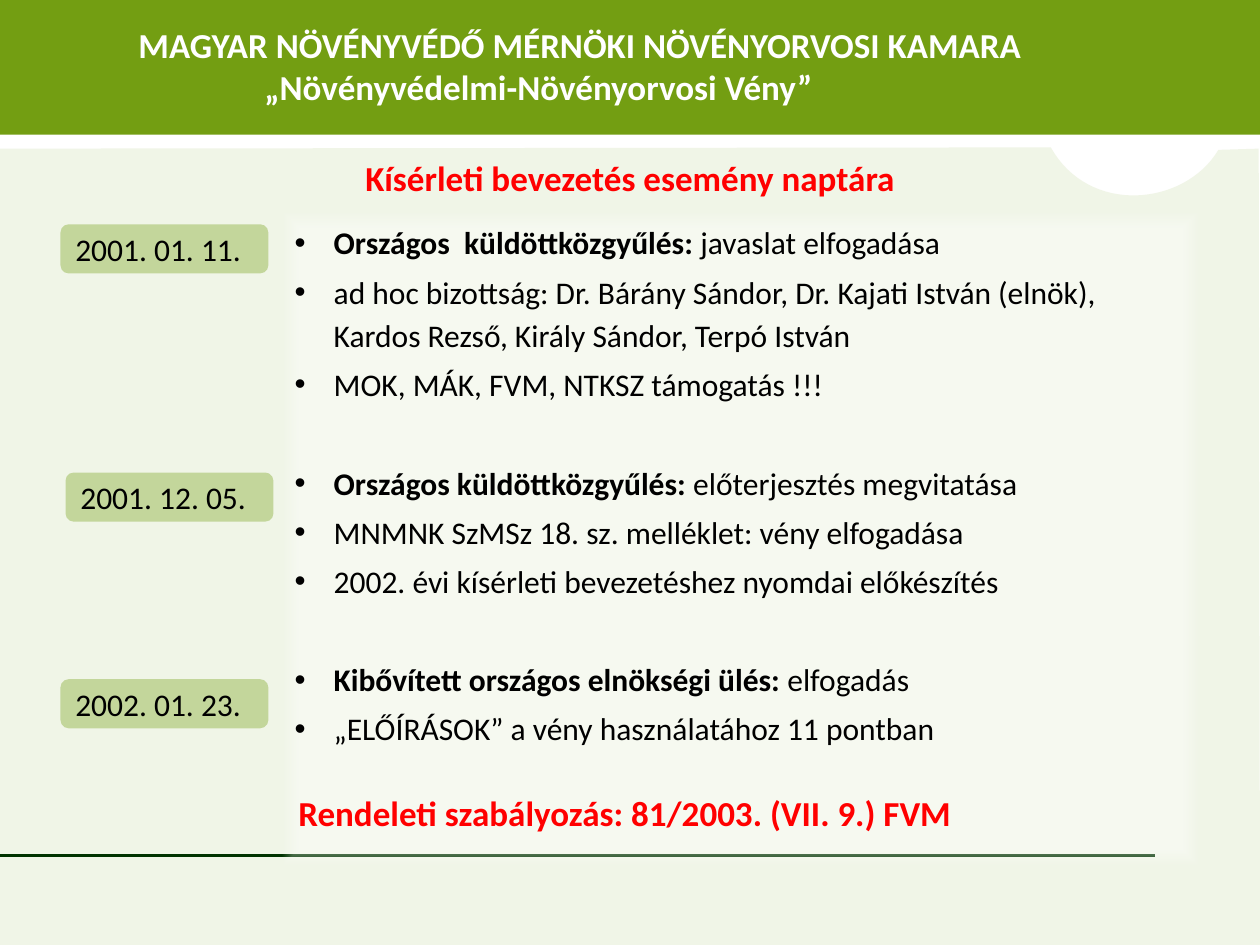
from dataclasses import dataclass

from lxml import etree
from pptx import Presentation
from pptx import util as u
from pptx.dml.color import RGBColor
from pptx.enum import shapes, text
from pptx.oxml import parse_xml
from pptx.oxml import ns

HEADER = [
    ("MAGYAR NÖVÉNYVÉDŐ MÉRNÖKI NÖVÉNYORVOSI KAMARA", 1),
    ("„Növényvédelmi-Növényorvosi Vény”", 2),
]
HEADLINES = [
    ("Kísérleti bevezetés esemény naptára", 0, 1.19),
    ("Rendeleti szabályozás: 81/2003. (VII. 9.) FVM", -0.04, 6.23),
]
DATES = [
    ("2001. 01. 11.", 0.48, 1.78),
    ("2001. 12. 05.", 0.52, 3.75),
    ("2002. 01. 23.", 0.48, 5.39),
]
EVENTS = [
    [
        ("Országos  küldöttközgyűlés: ", "javaslat elfogadása"),
        ("", "ad hoc bizottság: Dr. Bárány Sándor, Dr. Kajati István (elnök), "
             "Kardos Rezső, Király Sándor, Terpó István"),
        ("", "MOK, MÁK, FVM, NTKSZ támogatás !!!"),
    ],
    [
        ("Országos küldöttközgyűlés: ", "előterjesztés megvitatása"),
        ("", "MNMNK SzMSz 18. sz. melléklet: vény elfogadása"),
        ("", "2002. évi kísérleti bevezetéshez nyomdai előkészítés"),
    ],
    [
        ("Kibővített országos elnökségi ülés: ", "elfogadás"),
        ("", "„ELŐÍRÁSOK” a vény használatához 11 pontban"),
    ],
]
NOTCH = [(8.34, 1.17), (8.64, 1.71), (9.4, 1.64), (9.67, 1.19)]
CURVE_STEPS = 32
FADING_FILL = f"""<a:gradFill {ns.nsdecls("a")} rotWithShape="1"><a:gsLst>
<a:gs pos="95000"><a:srgbClr val="FFFFFF"><a:alpha val="40000"/></a:srgbClr></a:gs>
<a:gs pos="100000"><a:srgbClr val="FFFFFF"><a:alpha val="0"/></a:srgbClr></a:gs>
</a:gsLst><a:path path="rect"><a:fillToRect l="50000" t="50000" r="50000" b="50000"/></a:path>
</a:gradFill>"""


@dataclass(frozen=True)
class Theme:
    font: str = "Calibri"
    header: str = "739E12"
    panel: str = "EBF1DE"
    rule: str = "003300"
    badge: str = "C3D69B"
    accent: str = "FF0000"
    ink: str = "000000"
    paper: str = "FFFFFF"
    large: int = 20
    normal: int = 18
    item_gap: float = 3.2
    group_gap: float = 31.5


THEME = Theme()


def color(value):
    return RGBColor.from_string(value)


def add_run(paragraph, words, size, ink, bold=False):
    run = paragraph.add_run()
    run.text = words
    run.font.name = THEME.font
    run.font.size = u.Pt(size)
    run.font.bold = bold
    run.font.color.rgb = color(ink)


def paint(shape, fill):
    shape.shadow.inherit = False
    shape.line.fill.background()
    shape.fill.solid()
    shape.fill.fore_color.rgb = color(fill)


def add_block(slide, preset, box, fill, anchor=text.MSO_ANCHOR.MIDDLE):
    shape = slide.shapes.add_shape(preset, *map(u.Inches, box))
    paint(shape, fill)
    shape.text_frame.word_wrap = True
    shape.text_frame.vertical_anchor = anchor
    return shape


def next_paragraph(frame, index):
    paragraph = frame.add_paragraph() if index else frame.paragraphs[0]
    paragraph.alignment = text.PP_ALIGN.LEFT
    return paragraph


def set_indent(paragraph, left, first=0):
    properties = paragraph._p.get_or_add_pPr()
    properties.set("marL", str(u.Inches(left)))
    properties.set("indent", str(u.Inches(first)))
    return properties


def curve_point(t):
    weights = ((1 - t) ** 3, 3 * t * (1 - t) ** 2, 3 * t * t * (1 - t), t ** 3)
    return tuple(sum(w * point[axis] for w, point in zip(weights, NOTCH)) for axis in (0, 1))


def add_panel(slide):
    notch = [curve_point(step / CURVE_STEPS) for step in range(CURVE_STEPS + 1)]
    outline = notch + [(9.99, 1.18), (10, 7.5), (0, 7.5)]
    builder = slide.shapes.build_freeform(u.Inches(-0.01), u.Inches(1.18))
    builder.add_line_segments([(u.Inches(x), u.Inches(y)) for x, y in outline], close=True)
    panel = builder.convert_to_shape()
    paint(panel, THEME.panel)
    tint = panel._element.spPr.find(".//" + ns.qn("a:srgbClr"))
    etree.SubElement(tint, ns.qn("a:alpha"), val="70000")


def add_rule(slide):
    rule = slide.shapes.add_connector(
        shapes.MSO_CONNECTOR.STRAIGHT, u.Inches(0), u.Inches(6.79), u.Inches(9.17), u.Inches(6.79))
    rule.line.color.rgb = color(THEME.rule)
    rule.line.width = u.Pt(1.5)
    etree.SubElement(rule._element.spPr, ns.qn("a:effectLst"))


def add_header(slide):
    header = add_block(slide, shapes.MSO_SHAPE.RECTANGLE, (0, -0.03, 10.01, 1.1), THEME.header)
    for index, (words, indent) in enumerate(HEADER):
        paragraph = next_paragraph(header.text_frame, index)
        set_indent(paragraph, indent)
        add_run(paragraph, words, THEME.large, THEME.paper, True)


def add_events(slide):
    body = add_block(slide, shapes.MSO_SHAPE.RECTANGLE, (2.24, 1.68, 7.28, 5.2),
                     THEME.paper, text.MSO_ANCHOR.TOP)
    properties = body._element.spPr
    properties.replace(properties.find(ns.qn("a:solidFill")), parse_xml(FADING_FILL))
    items = [(place, item) for group in EVENTS for place, item in enumerate(group)]
    for index, (place, (lead, rest)) in enumerate(items):
        paragraph = next_paragraph(body.text_frame, index)
        paragraph.line_spacing = 1.15
        if index:
            paragraph.space_before = u.Pt(THEME.item_gap if place else THEME.group_gap)
        bullet = set_indent(paragraph, 0.31, -0.31)
        etree.SubElement(bullet, ns.qn("a:buFont"), typeface="Arial")
        etree.SubElement(bullet, ns.qn("a:buChar"), char="•")
        if lead:
            add_run(paragraph, lead, THEME.normal, THEME.ink, True)
        add_run(paragraph, rest, THEME.normal, THEME.ink)


def add_headline(slide, words, left, top):
    box = slide.shapes.add_textbox(*map(u.Inches, (left, top, 10, 0.43)))
    box.text_frame.word_wrap = True
    paragraph = box.text_frame.paragraphs[0]
    paragraph.alignment = text.PP_ALIGN.CENTER
    add_run(paragraph, words, THEME.large, THEME.accent, True)


def add_date(slide, words, left, top):
    badge = add_block(slide, shapes.MSO_SHAPE.ROUNDED_RECTANGLE, (left, top, 1.65, 0.39), THEME.badge)
    add_run(next_paragraph(badge.text_frame, 0), words, THEME.normal, THEME.ink)


def main():
    """Build the event calendar slide and save it."""
    presentation = Presentation()
    presentation.slide_width, presentation.slide_height = u.Inches(10), u.Inches(7.5)
    slide = presentation.slides.add_slide(presentation.slide_layouts[6])
    add_panel(slide)
    add_rule(slide)
    add_header(slide)
    add_events(slide)
    for headline in HEADLINES:
        add_headline(slide, *headline)
    for date in DATES:
        add_date(slide, *date)
    presentation.save("out.pptx")


if __name__ == "__main__":
    main()
